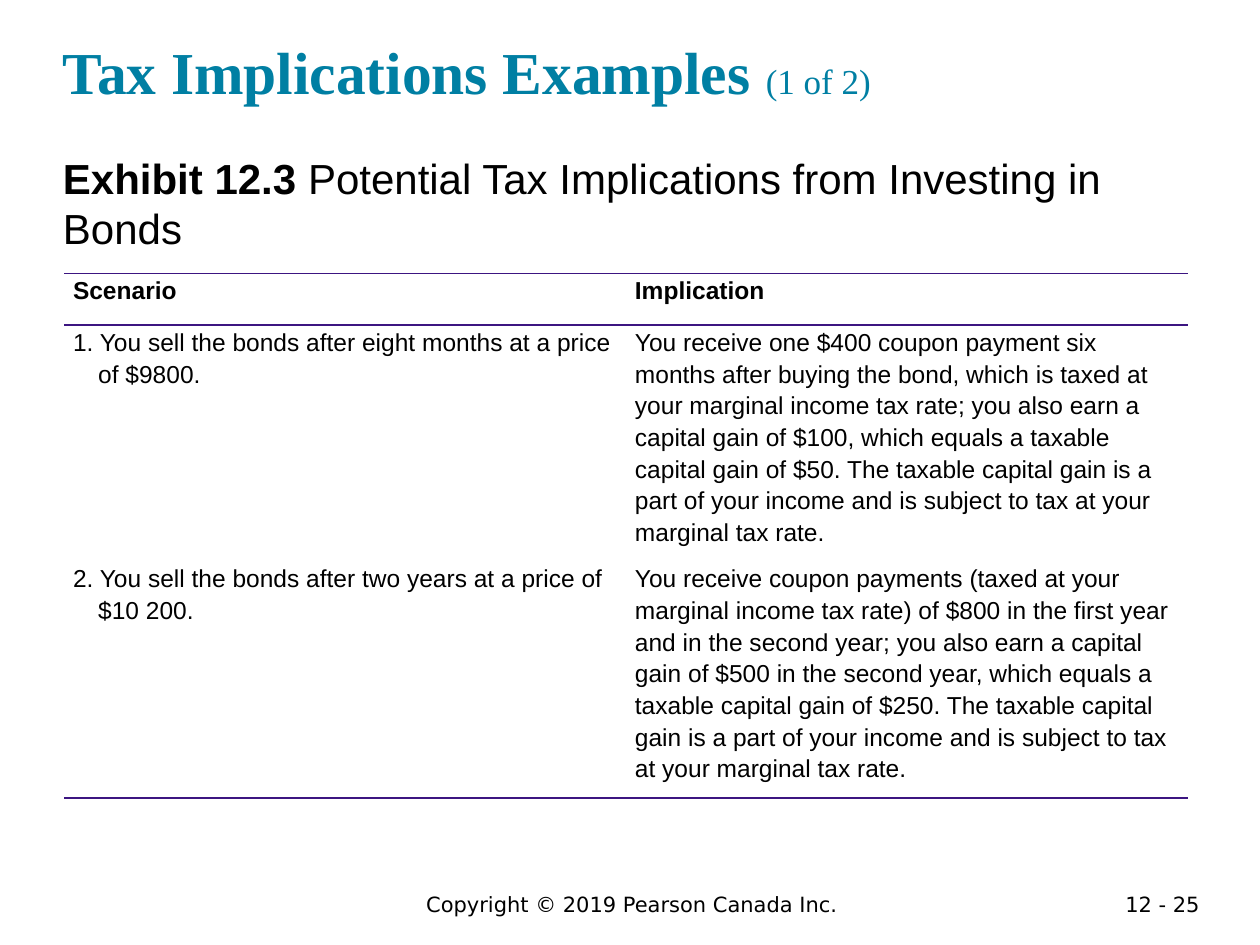
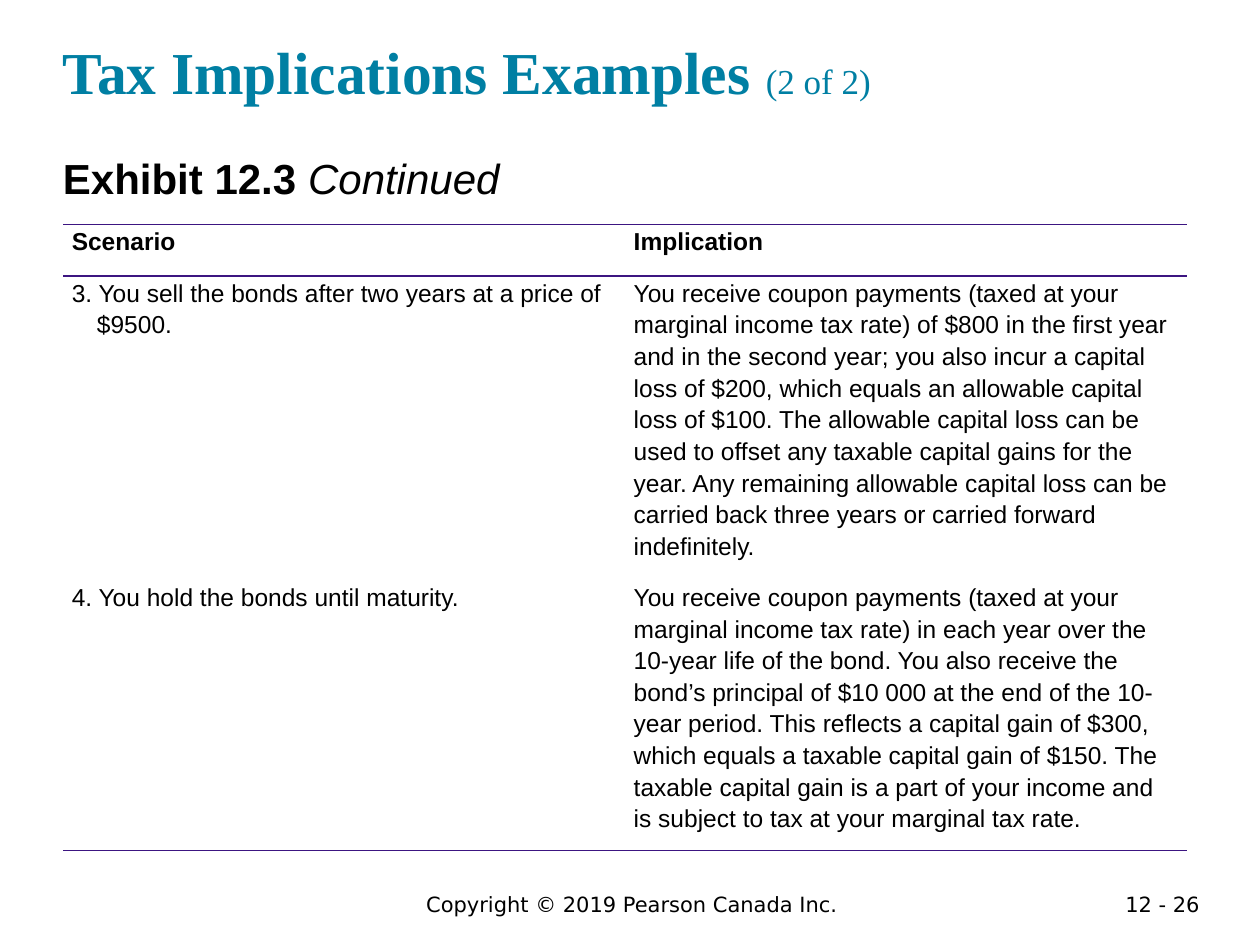
from dataclasses import dataclass

from lxml import etree
from pptx import Presentation
from pptx.dml.color import RGBColor
from pptx.enum.text import MSO_ANCHOR, PP_ALIGN
from pptx.oxml.ns import qn
from pptx.util import Inches, Pt


@dataclass(frozen=True)
class Theme:
    title_color: RGBColor = RGBColor(0x00, 0x7F, 0xA3)
    text_color: RGBColor = RGBColor(0x00, 0x00, 0x00)
    rule_color: str = "3C1581"
    title_font: str = "Times New Roman"
    body_font: str = "Arial"
    footer_font: str = "DejaVu Sans"
    title_size: int = 34
    count_size: int = 20
    exhibit_size: int = 24
    table_size: int = 14
    footer_size: int = 12


NO_STYLE_NO_GRID = "{2D5ABB26-0587-4C30-8999-92F81FD0307C}"
COPYRIGHT = "Copyright © 2019 Pearson Canada Inc."
HEADER = ("Scenario", "Implication")


class SlideBuilder:
    def __init__(self, deck, theme):
        self.deck = deck
        self.theme = theme
        self.slide = None

    def new_slide(self):
        self.slide = self.deck.slides.add_slide(self.deck.slide_layouts[6])

    def style(self, span, font, size, color=None, bold=False, italic=False):
        span.font.name = font
        span.font.size = Pt(size)
        span.font.bold = bold
        span.font.italic = italic
        span.font.color.rgb = color or self.theme.text_color

    def text_box(self, left, top, width, height):
        box = self.slide.shapes.add_textbox(
            Inches(left), Inches(top), Inches(width), Inches(height))
        box.text_frame.word_wrap = True
        box.text_frame.vertical_anchor = MSO_ANCHOR.TOP
        return box.text_frame

    def heading_box(self, top, height):
        """Full-width box without side insets; returns its paragraph."""
        frame = self.text_box(0.5, top, 9, height)
        frame.margin_left = frame.margin_right = frame.margin_bottom = 0
        frame.margin_top = Inches(0.04)
        return frame.paragraphs[0]

    def add_span(self, para, text, *args, **kwargs):
        span = para.add_run()
        span.text = text
        self.style(span, *args, **kwargs)

    def title(self, text, count, height):
        theme = self.theme
        para = self.heading_box(0.24, height)
        self.add_span(para, text + " ", theme.title_font, theme.title_size,
                      theme.title_color, bold=True)
        self.add_span(para, count, theme.title_font, theme.count_size,
                      theme.title_color)

    def exhibit(self, label, caption, height, italic=False):
        theme = self.theme
        para = self.heading_box(1.17, height)
        self.add_span(para, label + " ", theme.body_font, theme.exhibit_size,
                      bold=True)
        self.add_span(para, caption, theme.body_font, theme.exhibit_size,
                      italic=italic)

    def footer(self, page):
        theme = self.theme
        for text, place, align in (
                (COPYRIGHT, (1.64, 7.03, 6.75, 0.3), PP_ALIGN.CENTER),
                (f"12 - {page}", (8.62, 7.03, 1, 0.22), PP_ALIGN.RIGHT)):
            para = self.text_box(*place).paragraphs[0]
            para.alignment = align
            self.add_span(para, text, theme.footer_font, theme.footer_size)

    def rule(self, cell, side):
        """Draw a one-point border; side is 'T' or 'B'."""
        line = etree.SubElement(cell._tc.get_or_add_tcPr(), qn(f"a:ln{side}"),
                                w=str(Pt(1)))
        fill = etree.SubElement(line, qn("a:solidFill"))
        etree.SubElement(fill, qn("a:srgbClr"), val=self.theme.rule_color)

    def fill_cell(self, cell, text, bold, hanging):
        cell.margin_left = cell.margin_right = Inches(0.07)
        cell.margin_top = cell.margin_bottom = 0
        cell.text_frame.text = text
        para = cell.text_frame.paragraphs[0]
        para.line_spacing = 1.15
        if hanging:
            properties = para._p.get_or_add_pPr()
            properties.set("marL", str(Inches(0.2)))
            properties.set("indent", str(-Inches(0.2)))
        self.style(para.runs[0], self.theme.body_font, self.theme.table_size,
                   bold=bold)

    def scenario_table(self, left, top, height, scenarios):
        rows = [HEADER, *scenarios]
        frame = self.slide.shapes.add_table(
            len(rows), len(HEADER), Inches(left), Inches(top),
            Inches(8.92), Inches(height))
        table = frame.table
        table.first_row = table.horz_banding = False
        table._tbl.tblPr.find(qn("a:tableStyleId")).text = NO_STYLE_NO_GRID
        for row_index, texts in enumerate(rows):
            table.rows[row_index].height = Inches(0.41)
            is_header = row_index == 0
            for column, text in enumerate(texts):
                cell = table.cell(row_index, column)
                # Only scenarios that run over one line need a hanging indent
                hanging = not is_header and column == 0 and len(text) > 50
                self.fill_cell(cell, text, is_header, hanging)
                if is_header:
                    self.rule(cell, "T")
                if is_header or row_index == len(rows) - 1:
                    self.rule(cell, "B")
                cell.fill.background()
        frame.height = Inches(height)


EARLY_SALES = [
    ("1. You sell the bonds after eight months at a price of $9800.",
     "You receive one $400 coupon payment six months after buying the bond, "
     "which is taxed at your marginal income tax rate; you also earn a "
     "capital gain of $100, which equals a taxable capital gain of $50. The "
     "taxable capital gain is a part of your income and is subject to tax at "
     "your marginal tax rate."),
    ("2. You sell the bonds after two years at a price of $10 200.",
     "You receive coupon payments (taxed at your marginal income tax rate) of "
     "$800 in the first year and in the second year; you also earn a capital "
     "gain of $500 in the second year, which equals a taxable capital gain of "
     "$250. The taxable capital gain is a part of your income and is subject "
     "to tax at your marginal tax rate."),
]
LOSS_AND_MATURITY = [
    ("3. You sell the bonds after two years at a price of $9500.",
     "You receive coupon payments (taxed at your marginal income tax rate) of "
     "$800 in the first year and in the second year; you also incur a capital "
     "loss of $200, which equals an allowable capital loss of $100. The "
     "allowable capital loss can be used to offset any taxable capital gains "
     "for the year. Any remaining allowable capital loss can be carried back "
     "three years or carried forward indefinitely."),
    ("4. You hold the bonds until maturity.",
     "You receive coupon payments (taxed at your marginal income tax rate) in "
     "each year over the 10-year life of the bond. You also receive the "
     "bond’s principal of $10 000 at the end of the 10-year period. This "
     "reflects a capital gain of $300, which equals a taxable capital gain of "
     "$150. The taxable capital gain is a part of your income and is subject "
     "to tax at your marginal tax rate."),
]


def main():
    deck = Presentation()
    deck.slide_width, deck.slide_height = Inches(10), Inches(7.5)
    builder = SlideBuilder(deck, Theme())

    builder.new_slide()
    builder.footer(25)
    builder.title("Tax Implications Examples", "(1 of 2)", 0.68)
    builder.exhibit("Exhibit 12.3",
                    "Potential Tax Implications from Investing in Bonds", 0.92)
    builder.scenario_table(0.51, 2.17, 4.16, EARLY_SALES)

    builder.new_slide()
    builder.footer(26)
    builder.title("Tax Implications Examples", "(2 of 2)", 0.72)
    builder.exhibit("Exhibit 12.3", "Continued", 0.5, italic=True)
    builder.scenario_table(0.5, 1.78, 4.97, LOSS_AND_MATURITY)

    deck.save("out.pptx")


if __name__ == "__main__":
    main()
